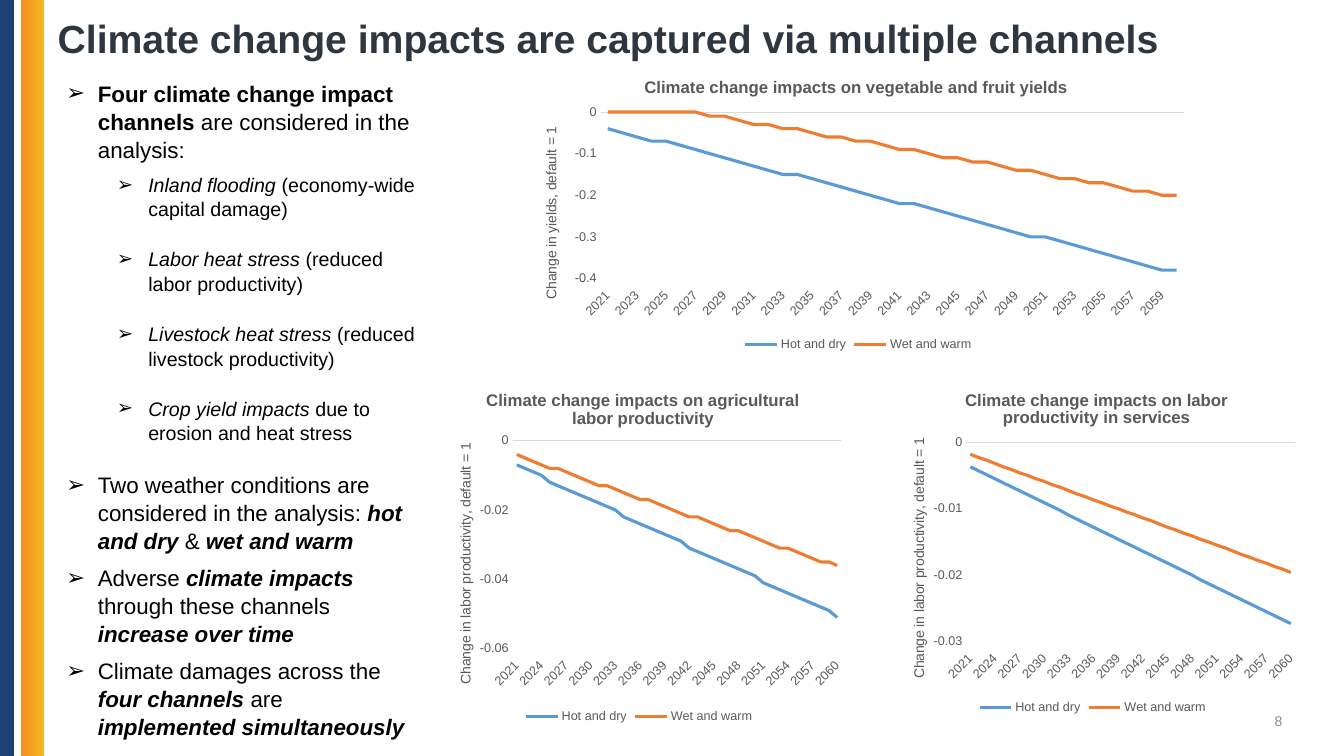
from lxml import etree
from pptx import Presentation
from pptx.chart.data import CategoryChartData
from pptx.dml.color import RGBColor
from pptx.enum.chart import XL_CHART_TYPE as ChartType
from pptx.enum.chart import XL_LEGEND_POSITION as LegendPosition
from pptx.enum.chart import XL_TICK_LABEL_POSITION as LabelPosition
from pptx.enum.chart import XL_TICK_MARK as TickMark
from pptx.enum.shapes import MSO_SHAPE as Preset
from pptx.enum.text import MSO_ANCHOR as Anchor
from pptx.enum.text import PP_ALIGN as Align
from pptx.oxml.ns import qn
from pptx.util import Pt

FONT = "Arial"
COLORS = {
    "navy": "1B4273", "amber": "F38F22", "gold": "F1BA20", "title": "2E3640",
    "black": "000000", "number": "8C8C8C", "label": "595959", "axis": "D9D9D9",
    "Hot and dry": "5B9BD5", "Wet and warm": "ED7D31",
}
YEARS = range(2021, 2061)

# Each bullet is a level followed by its runs: (text, style), b = bold, i = italic.
BULLETS = [
    (0, [("Four climate change impact channels ", "b"), ("are considered in the analysis:", "")]),
    (1, [("Inland flooding ", "i"), ("(economy-wide capital damage)", "")]),
    (1, [("Labor heat stress ", "i"), ("(reduced labor productivity)", "")]),
    (1, [("Livestock heat stress ", "i"), ("(reduced livestock productivity)", "")]),
    (1, [("Crop yield impacts ", "i"), ("due to erosion and heat stress", "")]),
    (0, [("Two weather conditions are considered in the analysis: ", ""),
         ("hot and dry ", "bi"), ("& ", ""), ("wet and warm", "bi")]),
    (0, [("Adverse ", ""), ("climate impacts", "bi"), (" through these channels ", ""),
         ("increase over time", "bi")]),
    (0, [("Climate damages across the ", ""), ("four channels ", "bi"), ("are ", ""),
         ("implemented simultaneously", "bi")]),
]


def rgb(name):
    return RGBColor.from_string(COLORS[name])


def style_font(font, size, color, bold=False, italic=False):
    font.name = FONT
    font.size = Pt(size)
    font.bold = bold
    font.italic = italic
    font.color.rgb = rgb(color)


def add_run(para, text, size, color, style=""):
    span = para.add_run()
    span.text = text
    style_font(span.font, size, color, "b" in style, "i" in style)


def add_bar(page, left, width, *colors):
    """Draw a full-height bar, plain or shaded from left to right."""
    bar = page.shapes.add_shape(Preset.RECTANGLE, Pt(left), 0, Pt(width), Pt(540))
    bar.shadow.inherit = False
    bar.line.fill.background()
    if len(colors) == 1:
        bar.fill.solid()
        bar.fill.fore_color.rgb = rgb(colors[0])
        return
    bar.fill.gradient()
    bar.fill.gradient_angle = 0
    for stop, color in zip(bar.fill.gradient_stops, colors):
        stop.color.rgb = rgb(color)


def add_title(page, text):
    title = page.shapes.title
    title.left, title.top, title.width, title.height = Pt(34), Pt(0), Pt(919), Pt(57.6)
    title.text_frame.vertical_anchor = Anchor.MIDDLE
    para = title.text_frame.paragraphs[0]
    para.alignment = Align.LEFT
    para.line_spacing = 0.9
    add_run(para, text, 28, "title", "b")


def add_text_box(page, left, top, width, height):
    box = page.shapes.add_textbox(Pt(left), Pt(top), Pt(width), Pt(height))
    box.text_frame.word_wrap = True
    return box.text_frame


def add_bullets(page, bullets):
    frame = add_text_box(page, 40.3, 52.6, 265.7, 466.6)
    for index, (level, runs) in enumerate(bullets):
        para = frame.add_paragraph() if index else frame.paragraphs[0]
        para.level = level
        para.line_spacing = 1.05
        para.space_before = Pt(6)
        para.space_after = Pt(12 * level)
        props = para._p.get_or_add_pPr()
        props.set("marL", str(Pt(22.5 + 36 * level)))
        props.set("indent", str(Pt(-22.5)))
        etree.SubElement(props, qn("a:buFont"), typeface=FONT)
        etree.SubElement(props, qn("a:buChar"), char="➢")
        for text, style in runs:
            add_run(para, text, 16 - 2 * level, "black", style)


def add_page_number(page, number):
    frame = add_text_box(page, 707, 500.4, 216, 28.8)
    frame.vertical_anchor = Anchor.MIDDLE
    para = frame.paragraphs[0]
    para.alignment = Align.RIGHT
    add_run(para, number, 10, "number")


def trend(first, last, digits, count=len(YEARS)):
    step = (last - first) / (count - 1)
    return [round(first + step * index, digits) for index in range(count)]


def set_layout(parent, x, y, size=None):
    """Place a chart part at fractions of the chart's width and height."""
    layout = parent.find(qn("c:layout"))
    if layout is None:
        layout = etree.Element(qn("c:layout"))
        text = parent.find(qn("c:tx"))
        if text is None:
            parent.insert(0, layout)
        else:
            text.addnext(layout)
    manual = etree.SubElement(layout, qn("c:manualLayout"))
    entries = [("xMode", "edge"), ("yMode", "edge"), ("x", x), ("y", y)]
    if size:
        entries = [("layoutTarget", "inner")] + entries + list(zip("wh", size))
    for name, value in entries:
        etree.SubElement(manual, qn(f"c:{name}"), val=str(value))


def set_chart_title(owner, text, size, place, style=""):
    title = owner.chart_title if hasattr(owner, "chart_title") else owner.axis_title
    add_run(title.text_frame.paragraphs[0], text, size, "label", style)
    set_layout(title._element, *place)


def add_line_chart(page, box, title, title_at, unit, unit_at, plot, low, step, series):
    data = CategoryChartData(number_format="General")
    data.categories = [str(year) for year in YEARS]
    for name, values in series.items():
        data.add_series(name, values)
    chart = page.shapes.add_chart(ChartType.LINE, *map(Pt, box), data).chart
    style_font(chart.font, 10, "black")
    set_chart_title(chart, title, 12, title_at, "b")
    set_layout(chart._chartSpace.chart.plotArea, *plot)

    chart.has_legend = True
    chart.legend.position = LegendPosition.BOTTOM
    chart.legend.include_in_layout = False
    style_font(chart.legend.font, 9, "label")

    years, values = chart.category_axis, chart.value_axis
    for axis in (years, values):
        axis.has_major_gridlines = False
        axis.major_tick_mark = axis.minor_tick_mark = TickMark.NONE
        style_font(axis.tick_labels.font, 9, "label")
    years.tick_label_position = LabelPosition.LOW
    years.format.line.color.rgb = rgb("axis")
    years.format.line.width = Pt(0.75)
    years._element.find(qn("c:txPr")).find(qn("a:bodyPr")).set("rot", "-2700000")
    values.minimum_scale, values.maximum_scale, values.major_unit = low, 0, step
    values.format.line.fill.background()
    set_chart_title(values, unit, 10, unit_at)

    chart.plots[0].vary_by_categories = False
    for line in chart.plots[0].series:
        line.smooth = False
        line.format.line.color.rgb = rgb(line.name)
        line.format.line.width = Pt(2.25)


def main():
    deck = Presentation()
    deck.slide_width, deck.slide_height = Pt(960), Pt(540)
    page = deck.slides.add_slide(deck.slide_layouts[5])
    add_bar(page, 0, 10, "navy")
    add_bar(page, 15, 16.6, "amber", "gold")
    add_title(page, "Climate change impacts are captured via multiple channels")
    add_page_number(page, "8")
    add_bullets(page, BULLETS)

    add_line_chart(
        page, (370.8, 41.8, 484.6, 212.4),
        "Climate change impacts on vegetable and fruit yields", (0.18, 0.05),
        "Change in yields, default = 1", (0.03, 0.22),
        (0.12, 0.18, (0.86, 0.56)), -0.4, 0.1,
        {"Hot and dry": trend(-0.0388, -0.3843, 2),
         "Wet and warm": [0] * 6 + trend(-0.0003, -0.2049, 2, 34)})
    labor_unit = "Change in labor productivity, default = 1"
    add_line_chart(
        page, (306, 263.5, 301, 256.3),
        "Climate change impacts on agricultural labor productivity", (0.13, 0.05),
        labor_unit, (0.06, 0.2),
        (0.2, 0.2, (0.78, 0.58)), -0.06, 0.02,
        {"Hot and dry": trend(-0.00708, -0.0506, 3),
         "Wet and warm": trend(-0.00431, -0.03629, 3)})
    add_line_chart(
        page, (630, 263.5, 301, 249.8),
        "Climate change impacts on labor productivity in services", (0.19, 0.05),
        labor_unit, (0.06, 0.19),
        (0.2, 0.21, (0.78, 0.57)), -0.03, 0.01,
        {"Hot and dry": trend(-0.003682, -0.02732, 4),
         "Wet and warm": trend(-0.001831, -0.019591, 4)})
    deck.save("out.pptx")


if __name__ == "__main__":
    main()
